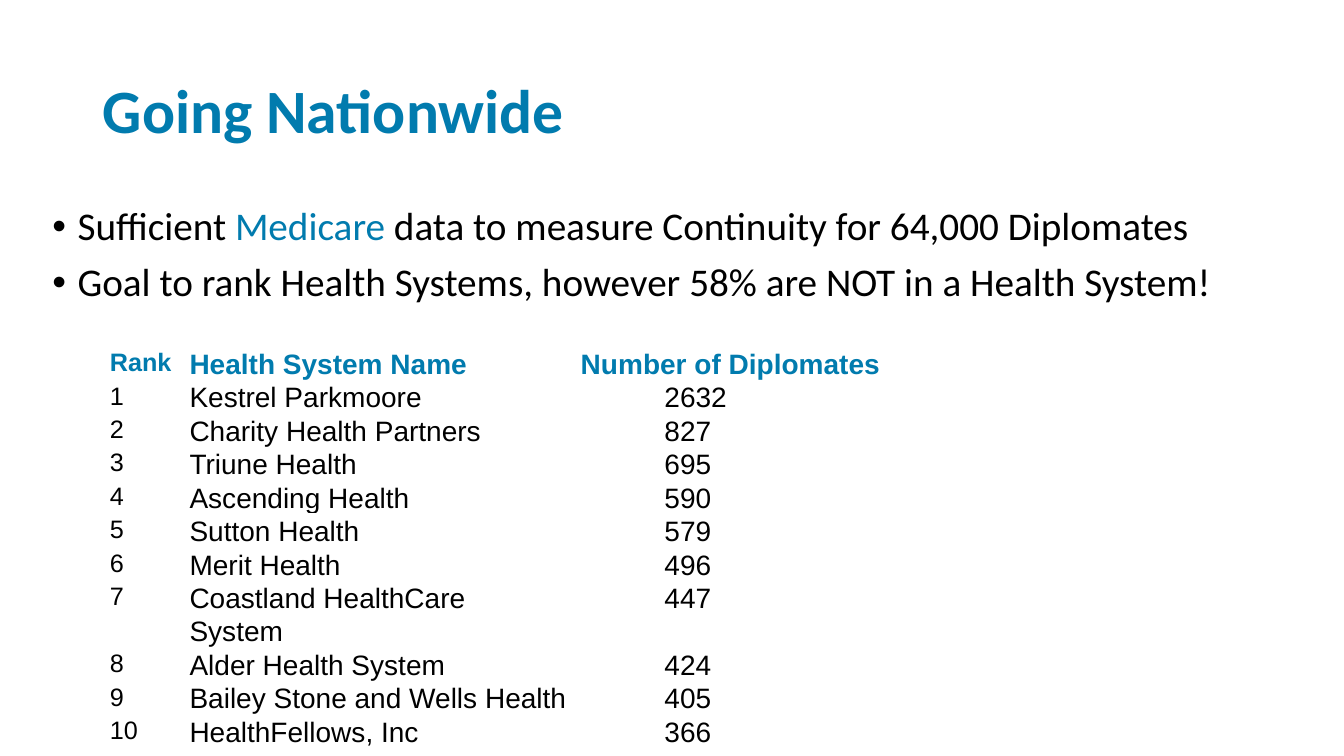
from lxml.etree import SubElement as Sub
from pptx import Presentation
from pptx.dml.color import RGBColor as Rgb
from pptx.enum.text import MSO_ANCHOR as Anchor, MSO_AUTO_SIZE as Fit, PP_ALIGN as Align
from pptx.oxml.ns import qn
from pptx.util import Inches, Pt

COLORS = {"blue": "017BAE", "black": "000000", "white": "FFFFFF"}
WIDE, HIGH = 13.33, 7.5

HEADS = ["Rank", "Health System Name", "Number of Diplomates"]
SYSTEMS = [
    ("Kestrel Parkmoore", 2632),
    ("Charity Health Partners", 827),
    ("Triune Health", 695),
    ("Ascending Health", 590),
    ("Sutton Health", 579),
    ("Merit Health", 496),
    ("Coastland HealthCare System", 447),
    ("Alder Health System", 424),
    ("Bailey Stone and Wells Health", 405),
    ("HealthFellows, Inc", 366),
]


class Deck:
    """Holds the style and the current slide; places are percent of its size."""

    def __init__(self):
        self.prs = Presentation()
        self.prs.slide_width, self.prs.slide_height = Inches(WIDE), Inches(HIGH)
        self.slide = self.prs.slides.add_slide(self.prs.slide_layouts[1])

    def across(self, share):
        return Inches(WIDE * share / 100)

    def down(self, share):
        return Inches(HIGH * share / 100)

    def place(self, shape, box):
        left, top, width, height = box
        spots = {"left": self.across(left), "top": self.down(top),
                 "width": self.across(width), "height": self.down(height)}
        for name, value in spots.items():
            setattr(shape, name, value)

    def fill_text(self, para, parts, size, face, bold=False, lines=0.9, before=0):
        form = {"alignment": Align.LEFT, "line_spacing": lines,
                "space_before": Pt(before), "space_after": Pt(0)}
        for name, value in form.items():
            setattr(para, name, value)
        for text, color in parts:
            run = para.add_run()
            run.text = text
            for name, value in {"size": Pt(size), "name": face, "bold": bold}.items():
                setattr(run.font, name, value)
            run.font.color.rgb = Rgb.from_string(COLORS[color])

    def title(self, text, box):
        shape = self.slide.shapes.title
        self.place(shape, box)
        frame = shape.text_frame
        frame.auto_size, frame.vertical_anchor = Fit.NONE, Anchor.MIDDLE
        self.fill_text(frame.paragraphs[0], [(text, "blue")], 44, "Calibri", True)

    def bullets(self, items, box):
        shape = self.slide.placeholders[1]
        self.place(shape, box)
        frame = shape.text_frame
        frame.auto_size, frame.vertical_anchor = Fit.NONE, Anchor.TOP
        for i, parts in enumerate(items):
            para = frame.add_paragraph() if i else frame.paragraphs[0]
            props = para._p.get_or_add_pPr()
            props.set("marL", str(Inches(0.25)))
            props.set("indent", str(Inches(-0.25)))
            Sub(props, qn("a:buFont")).set("typeface", "Arial")
            Sub(props, qn("a:buChar")).set("char", "•")
            self.fill_text(para, parts, 28, "Calibri", before=10 if i else 0)

    def table(self, rows, left, top, cols, step):
        shape = self.slide.shapes.add_table(
            len(rows), len(cols), self.across(left), self.down(top),
            self.across(sum(cols)), self.down(step * len(rows)))
        grid = shape.table
        grid.first_row = grid.horz_banding = False
        for col, width in zip(grid.columns, cols):
            col.width = self.across(width)
        for r, row in enumerate(rows):
            for c, text in enumerate(row):
                self.cell(grid.cell(r, c), str(text), head=r == 0, col=c)

    def cell(self, cell, text, head, col):
        deep = col == 2 and not head
        form = {"margin_left": Inches(0.9 if deep else 0.07),
                "margin_right": Inches(0.3 if deep else 0.07),
                "margin_top": 0, "margin_bottom": 0}
        for name, value in form.items():
            setattr(cell, name, value)
        cell.fill.solid()
        cell.fill.fore_color.rgb = Rgb.from_string(COLORS["white"])
        self.fill_text(cell.text_frame.paragraphs[0], [(text, "blue" if head else "black")],
                       20 if col else 18, "Arial", head, lines=1.07)


def main():
    deck = Deck()

    # Heading
    deck.title("Going Nationwide", (6.9, 5.33, 86.27, 19.33))

    # Key points
    deck.bullets([
        [("Sufficient ", "black"), ("Medicare", "blue"),
         (" data to measure Continuity for 64,000 Diplomates", "black")],
        [("Goal to rank Health Systems, however 58% are NOT in a Health System!", "black")],
    ], (3.15, 26.67, 89.95, 63.47))

    # Ranking of health systems
    ranks = [(i, *row) for i, row in enumerate(SYSTEMS, 1)]
    deck.table([HEADS, *ranks], 7.65, 45.87, (5.93, 29.11, 23.93), 4.4)

    deck.prs.save("out.pptx")


if __name__ == "__main__":
    main()
